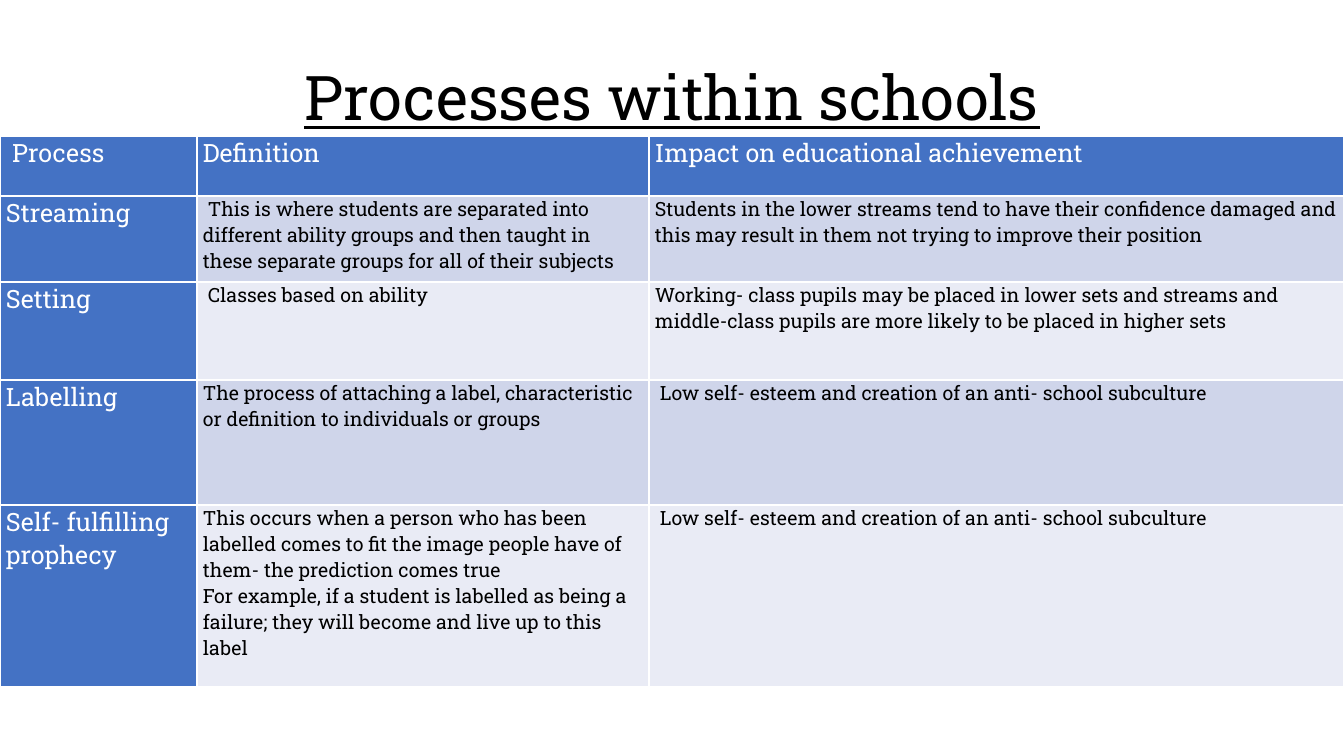
from dataclasses import dataclass

from lxml import etree
from pptx import Presentation
from pptx import util as u
from pptx.dml.color import RGBColor
from pptx.enum import text
from pptx.oxml.ns import qn

EMU_PER_PX = 914400 / 100.8


def px(length):
    return u.Emu(round(length * EMU_PER_PX))


@dataclass(frozen=True)
class Theme:
    font: str = "Roboto Slab"
    ink: str = "000000"
    white: str = "FFFFFF"
    accent: str = "4472C4"
    bands: tuple = ("CFD5EA", "E9EBF5")
    title_size: int = 44
    heading_size: int = 18
    body_size: int = 14
    border_width: int = 1
    cell_inset: int = 6


class SlideBuilder:
    def __init__(self, slide, theme):
        self.slide = slide
        self.theme = theme

    def style(self, paragraph, size, color):
        font = paragraph.font
        font.name = self.theme.font
        font.size = u.Pt(size)
        font.bold = False
        font.color.rgb = RGBColor.from_string(color)

    def title(self, words, left, top, width, height):
        box = self.slide.shapes.add_textbox(px(left), px(top), px(width), px(height))
        frame = box.text_frame
        frame.word_wrap = True
        frame.vertical_anchor = text.MSO_ANCHOR.MIDDLE
        paragraph = frame.paragraphs[0]
        paragraph.text = words
        paragraph.alignment = text.PP_ALIGN.CENTER
        paragraph.line_spacing = 0.9
        self.style(paragraph, self.theme.title_size, self.theme.ink)
        paragraph.font.underline = True

    def borders(self, cell):
        properties = cell._tc.get_or_add_tcPr()
        for side in ("a:lnL", "a:lnR", "a:lnT", "a:lnB"):
            line = etree.SubElement(properties, qn(side),
                                    w=str(u.Pt(self.theme.border_width)))
            fill = etree.SubElement(line, qn("a:solidFill"))
            etree.SubElement(fill, qn("a:srgbClr"), val=self.theme.white)

    def cell(self, cell, words, heading, band):
        theme = self.theme
        cell.text = words
        cell.margin_left = cell.margin_right = px(theme.cell_inset)
        cell.margin_top = cell.margin_bottom = 0
        self.borders(cell)
        cell.fill.solid()
        cell.fill.fore_color.rgb = RGBColor.from_string(theme.accent if heading else band)
        for paragraph in cell.text_frame.paragraphs:
            if heading:
                self.style(paragraph, theme.heading_size, theme.white)
            else:
                self.style(paragraph, theme.body_size, theme.ink)

    def table(self, rows, left, top, widths, heights):
        frame = self.slide.shapes.add_table(len(rows), len(widths), px(left), px(top),
                                            px(sum(widths)), px(sum(heights)))
        table = frame.table
        for column, width in zip(table.columns, widths):
            column.width = px(width)
        for i, (row, height) in enumerate(zip(rows, heights)):
            table.rows[i].height = px(height)
            band = self.theme.bands[(i - 1) % 2]
            for j, words in enumerate(row):
                self.cell(table.cell(i, j), words, i == 0 or j == 0, band)


SUBCULTURE = " Low self- esteem and creation of an anti- school subculture"
PROCESSES = [
    (" Process", "Definition", "Impact on educational achievement"),
    ("Streaming",
     " This is where students are separated into different ability groups "
     "and then taught in these separate groups for all of their subjects",
     "Students in the lower streams tend to have their confidence damaged "
     "and this may result in them not trying to improve their position"),
    ("Setting",
     " Classes based on ability",
     "Working- class pupils may be placed in lower sets and streams "
     "and middle-class pupils are more likely to be placed in higher sets"),
    ("Labelling",
     "The process of attaching a label, characteristic or definition "
     "to individuals or groups",
     SUBCULTURE),
    ("Self- fulfilling prophecy",
     "This occurs when a person who has been labelled comes to fit the image "
     "people have of them- the prediction comes true\n"
     "For example, if a student is labelled as being a failure; "
     "they will become and live up to this label",
     SUBCULTURE),
]


def main():
    presentation = Presentation()
    presentation.slide_width = px(1344)
    presentation.slide_height = px(756)
    slide = presentation.slides.add_slide(presentation.slide_layouts[6])
    builder = SlideBuilder(slide, Theme())

    # Heading
    builder.title("Processes within schools", 92, 28, 1160, 146)

    # Processes, their definitions and impact
    builder.table(PROCESSES, 0, 136, widths=(197, 452, 695),
                  heights=(60, 86, 98, 125, 182))

    presentation.save("out.pptx")


if __name__ == "__main__":
    main()
